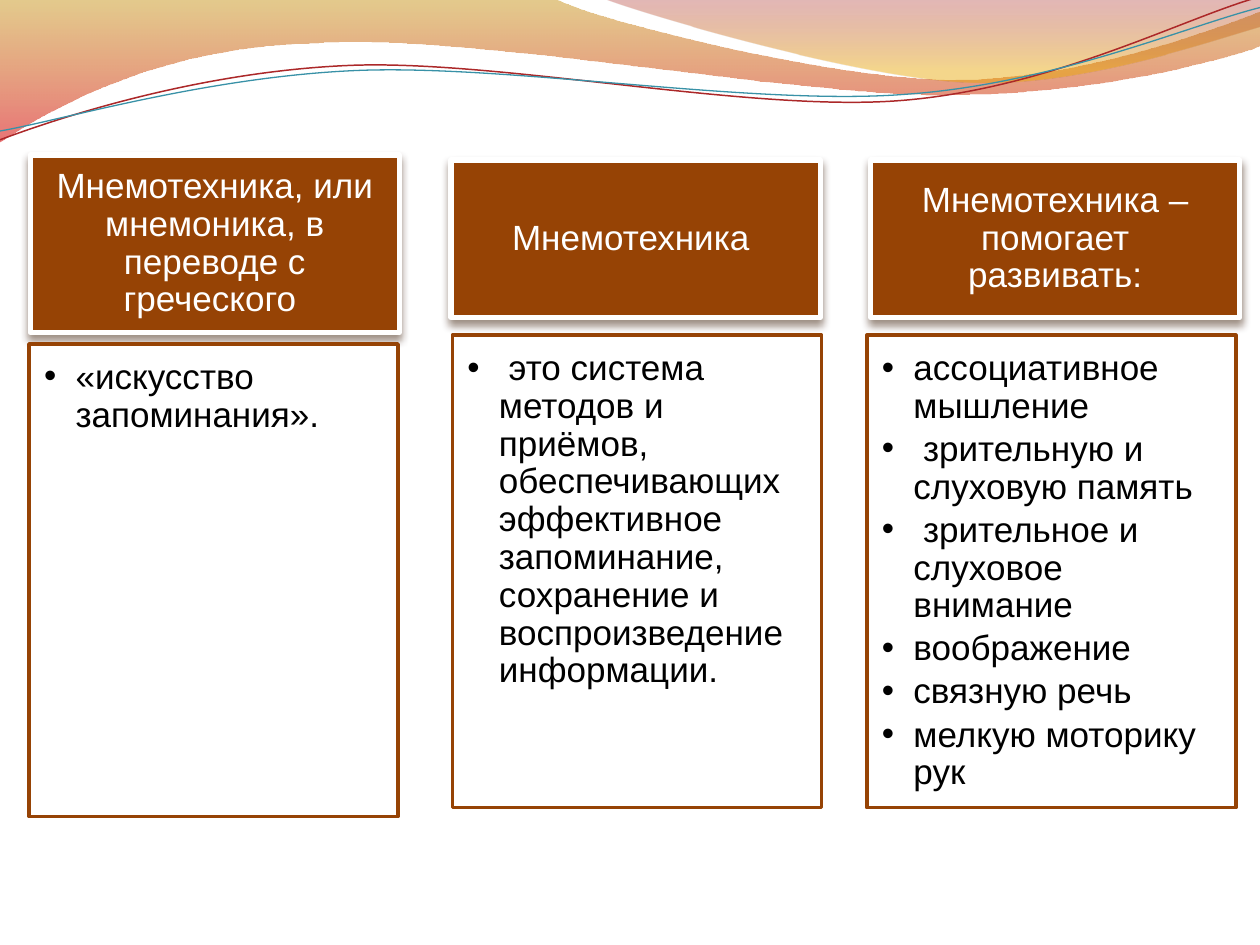
from lxml.etree import SubElement
from pptx import Presentation
from pptx.dml.color import RGBColor
from pptx.enum.shapes import MSO_SHAPE
from pptx.enum.text import MSO_ANCHOR, PP_ALIGN
from pptx.oxml.ns import qn
from pptx.util import Inches, Pt

COLORS = {
    "brown": "964305", "white": "FFFFFF", "black": "000000", "shadow": "361700",
    "ochre": "C38B00", "red": "D60305", "wine": "A11112", "amber": "E9A600",
    "crimson": "AC2829", "teal": "3891A7",
}
COLUMN_WIDTH = 2.93
BODY_HEIGHT = 3.75

# Each column: heading box (left, top, height), body box (left, top), texts
COLUMNS = [
    ((0.24, 1.23, 1.41), (0.23, 2.73),
     "Мнемотехника, или мнемоника, в переводе с греческого ",
     ["«искусство запоминания»."]),
    ((3.58, 1.27, 1.25), (3.59, 2.66),
     "Мнемотехника ",
     [" это система методов и приёмов, обеспечивающих эффективное "
      "запоминание, сохранение и воспроизведение информации."]),
    ((6.91, 1.27, 1.25), (6.88, 2.66),
     "Мнемотехника – помогает развивать:",
     ["ассоциативное мышление", " зрительную и слуховую память",
      " зрительное и слуховое внимание", "воображение", "связную речь",
      "мелкую моторику рук\u00a0"]),
]

# Two numbers are a straight segment; six numbers are a cubic curve
LEFT_WAVE = [
    (0, 0), (4.4, -0.01), (4.76, 0.17, 6.64, 0.63, 7.58, 0.63),
    (8.53, 0.63, 9.58, 0.26, 10, 0.09), (10.01, 0.36),
    (9.83, 0.44, 8.7, 0.76, 7.46, 0.75), (6.22, 0.75, 3.82, 0.28, 2.57, 0.34),
    (1.29, 0.36, 0.46, 0.83, -0.01, 1.13),
]
RIGHT_WAVE = [
    (4.79, -0.01), (5.09, 0.11, 6.82, 0.62, 7.69, 0.65),
    (8.56, 0.69, 9.61, 0.32, 10, 0.21), (10, 0),
]
RED_LINE = [
    (0, 1.11), (0.48, 0.93, 1.58, 0.57, 2.77, 0.52),
    (3.95, 0.47, 5.93, 0.89, 7.13, 0.8), (8.33, 0.71, 9.38, 0.15, 9.98, -0.02),
]
TEAL_LINE = [
    (0, 1.04), (0.47, 0.96, 1.64, 0.61, 2.83, 0.56),
    (4.03, 0.51, 5.97, 0.84, 7.17, 0.75), (8.36, 0.67, 9.41, 0.21, 10, 0.06),
]


def rgb(name):
    return RGBColor.from_string(COLORS[name])


def set_alpha(color_element, percent):
    SubElement(color_element, qn("a:alpha")).set("val", str(percent * 1000))


def set_line(shape, color, width):
    shape.line.color.rgb = rgb(color)
    shape.line.width = Pt(width)


def add_curve(slide, segments, closed):
    """Draw the control polygon, then merge each triple into a cubic curve."""
    start, *rest = segments
    points = [(Inches(x), Inches(y)) for segment in rest
              for x, y in zip(segment[::2], segment[1::2])]
    builder = slide.shapes.build_freeform(*map(Inches, start))
    builder.add_line_segments(points, close=closed)
    curve = builder.convert_to_shape()
    curve.shadow.inherit = False
    steps = iter(list(curve.element.iter(qn("a:lnTo"))))
    for segment in rest:
        step = next(steps)
        if len(segment) == 6:
            step.tag = qn("a:cubicBezTo")
            for control in (next(steps), next(steps)):
                step.append(control[0])
                control.getparent().remove(control)
    return curve


def add_wave(slide, segments, stops):
    """Closed wave with a top-down gradient of (position, color, opacity)."""
    wave = add_curve(slide, segments, closed=True)
    wave.line.fill.background()
    wave.fill.gradient()
    wave.fill.gradient_angle = 270
    for stop, (position, color, _) in zip(wave.fill.gradient_stops, stops):
        stop.position = position
        stop.color.rgb = rgb(color)
    stop_colors = list(wave.element.spPr.iter(qn("a:srgbClr")))
    for stop_color, (_, _, opacity) in zip(stop_colors, stops):
        set_alpha(stop_color, opacity)


def add_wave_line(slide, segments, color, width):
    wave_line = add_curve(slide, segments, closed=False)
    wave_line.fill.background()
    set_line(wave_line, color, width)


def add_header_waves(slide):
    add_wave(slide, LEFT_WAVE, [(0, "ochre", 45), (1, "red", 55)])
    add_wave(slide, RIGHT_WAVE, [(0, "wine", 30), (0.8, "amber", 45)])
    add_wave_line(slide, RED_LINE, "crimson", 0.85)
    add_wave_line(slide, TEAL_LINE, "teal", 0.75)


def add_box(slide, left, top, height, fill, border, border_width):
    box = slide.shapes.add_shape(MSO_SHAPE.RECTANGLE, Inches(left), Inches(top),
                                 Inches(COLUMN_WIDTH), Inches(height))
    box.shadow.inherit = False
    box.fill.solid()
    box.fill.fore_color.rgb = rgb(fill)
    set_line(box, border, border_width)
    return box


def add_drop_shadow(shape):
    effects = shape.element.spPr.find(qn("a:effectLst"))
    shadow = SubElement(effects, qn("a:outerShdw"), blurRad=str(Pt(4.5)),
                        dist=str(Pt(3)), dir="5400000", rotWithShape="0")
    color = SubElement(shadow, qn("a:srgbClr"), val=COLORS["shadow"])
    set_alpha(color, 48)


def add_bullet(paragraph):
    properties = paragraph._p.get_or_add_pPr()
    properties.set("marL", str(Inches(0.25)))
    properties.set("indent", str(Inches(-0.25)))
    SubElement(properties, qn("a:buFont"), typeface="Arial")
    SubElement(properties, qn("a:buChar"), char="•")


def write(shape, lines, *, color, align, anchor, insets, space_after,
          size=20, bulleted=False):
    frame = shape.text_frame
    frame.word_wrap = True
    frame.vertical_anchor = anchor
    (frame.margin_left, frame.margin_top,
     frame.margin_right, frame.margin_bottom) = map(Inches, insets)
    for index, line in enumerate(lines):
        paragraph = frame.add_paragraph() if index else frame.paragraphs[0]
        paragraph.alignment = align
        paragraph.line_spacing = 0.9
        paragraph.space_after = Pt(space_after)
        if bulleted:
            paragraph.level = 1
            add_bullet(paragraph)
        run = paragraph.add_run()
        run.text = line
        run.font.name = "Arial"
        run.font.size = Pt(size)
        run.font.color.rgb = rgb(color)


def add_column(slide, heading_box, body_box, heading_text, items):
    heading = add_box(slide, *heading_box, "brown", "white", 3)
    add_drop_shadow(heading)
    write(heading, [heading_text], color="white", align=PP_ALIGN.CENTER,
          anchor=MSO_ANCHOR.MIDDLE, insets=(0.16, 0.09, 0.16, 0.09), space_after=7)
    body = add_box(slide, *body_box, BODY_HEIGHT, "white", "brown", 2)
    write(body, items, color="black", align=PP_ALIGN.LEFT, anchor=MSO_ANCHOR.TOP,
          insets=(0.12, 0.12, 0.16, 0.17), space_after=3, bulleted=True)


def main():
    presentation = Presentation()
    presentation.slide_width, presentation.slide_height = Inches(10), Inches(7.5)
    slide = presentation.slides.add_slide(presentation.slide_layouts[6])
    add_header_waves(slide)
    for column in COLUMNS:
        add_column(slide, *column)
    presentation.save("out.pptx")


if __name__ == "__main__":
    main()
